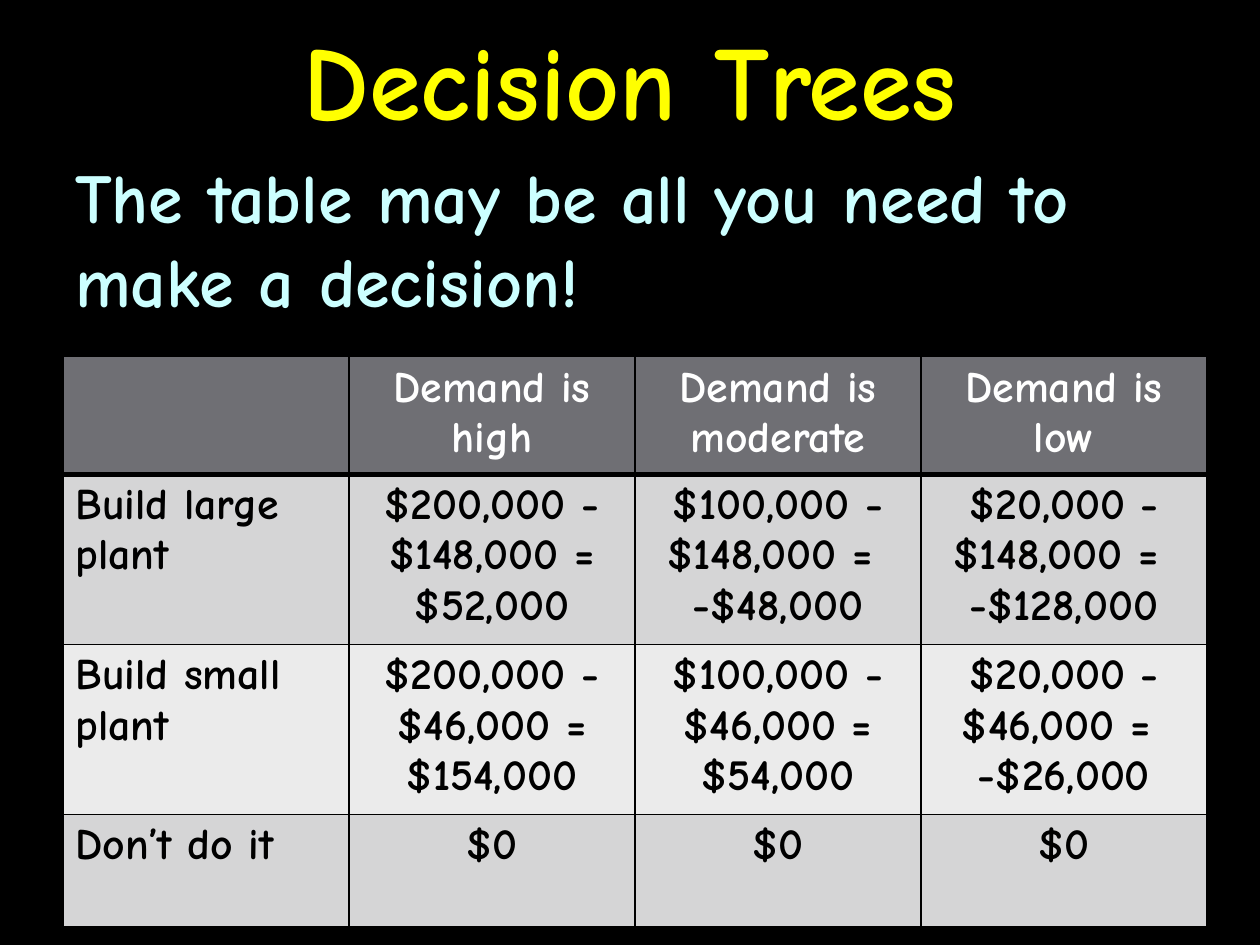
"""Build the Decision Trees slide with its payoff table."""
from lxml import etree
from pptx import Presentation
from pptx.dml.color import RGBColor
from pptx.enum.text import MSO_ANCHOR, PP_ALIGN
from pptx.oxml.ns import qn
from pptx.util import Inches, Pt

LEFT, CENTER = PP_ALIGN.LEFT, PP_ALIGN.CENTER
TOP, MIDDLE = MSO_ANCHOR.TOP, MSO_ANCHOR.MIDDLE
COLORS = {
    "back": "000000", "title": "FFFF00", "body": "CCFFFF", "white": "FFFFFF",
    "ink": "000000", "head": "6F6F74", "odd": "D5D5D6", "even": "EBEBEB",
}
FONT = {"name": "Comic Neue", "bold": True}
ROWS = [
    ["", "Demand is high", "Demand is moderate", "Demand is low"],
    ["Build large plant", "$200,000 - $148,000 = $52,000",
     "$100,000 - $148,000 = \n-$48,000", "$20,000 - $148,000 = \n-$128,000"],
    ["Build small plant", "$200,000 - $46,000 = $154,000",
     "$100,000 - $46,000 = $54,000", "$20,000 - $46,000 = \n-$26,000"],
    ["Don’t do it", "$0", "$0", "$0"],
]
HEIGHTS = [0.89, 1.3, 1.3, 0.89]
FILLS = ["head", "odd", "even", "odd"]


def rgb(key):
    """Return the named colour."""
    return RGBColor.from_string(COLORS[key])


def write(frame, text, size, color, align):
    """Fill a text frame, one paragraph per line of text."""
    frame.text = text
    for para in frame.paragraphs:
        para.alignment = align
        for name, value in {**FONT, "size": Pt(size)}.items():
            setattr(para.font, name, value)
        para.font.color.rgb = rgb(color)
        for run in para.runs:
            for name, value in {**FONT, "size": Pt(size)}.items():
                setattr(run.font, name, value)
            run.font.color.rgb = rgb(color)


def add_text(slide, box, text, size, color, align, anchor):
    """Add a wrapped text box."""
    frame = slide.shapes.add_textbox(*map(Inches, box)).text_frame
    frame.word_wrap = True
    frame.vertical_anchor = anchor
    write(frame, text, size, color, align)


def add_edges(cell, widths):
    """Draw the cell borders from a dict of side to width in points."""
    props = cell._tc.get_or_add_tcPr()
    for side, width in widths.items():
        line = etree.SubElement(props, qn(f"a:ln{side}"), w=str(Pt(width)))
        fill = etree.SubElement(line, qn("a:solidFill"))
        etree.SubElement(fill, qn("a:srgbClr"), val=COLORS["ink"])


def add_grid(slide):
    """Add the payoff table."""
    box = map(Inches, (0.5, 2.83, 9.08, sum(HEIGHTS)))
    table = slide.shapes.add_table(len(ROWS), len(ROWS[0]), *box).table
    for col in table.columns:
        col.width = Inches(2.27)
    for r, texts in enumerate(ROWS):
        table.rows[r].height = Inches(HEIGHTS[r])
        edges = {"L": 1, "R": 1, "T": 3 if r == 1 else 1, "B": 3 if r == 0 else 1}
        for c, text in enumerate(texts):
            cell = table.cell(r, c)
            add_edges(cell, edges)
            cell.fill.solid()
            cell.fill.fore_color.rgb = rgb(FILLS[r])
            write(cell.text_frame, text, 25, "ink" if r else "white",
                  CENTER if c else LEFT)


def main():
    """Build and save the slide."""
    deck = Presentation()
    deck.slide_width, deck.slide_height = Inches(10), Inches(7.5)
    slide = deck.slides.add_slide(deck.slide_layouts[6])
    slide.background.fill.solid()
    slide.background.fill.fore_color.rgb = rgb("back")
    add_text(slide, (0, 0, 10, 1.25), "Decision Trees", 60, "title", CENTER, MIDDLE)
    add_text(slide, (0.5, 1.17, 9, 6.17),
             "The table may be all you need to make a decision!",
             40, "body", LEFT, TOP)
    add_grid(slide)
    deck.save("out.pptx")


if __name__ == "__main__":
    main()
